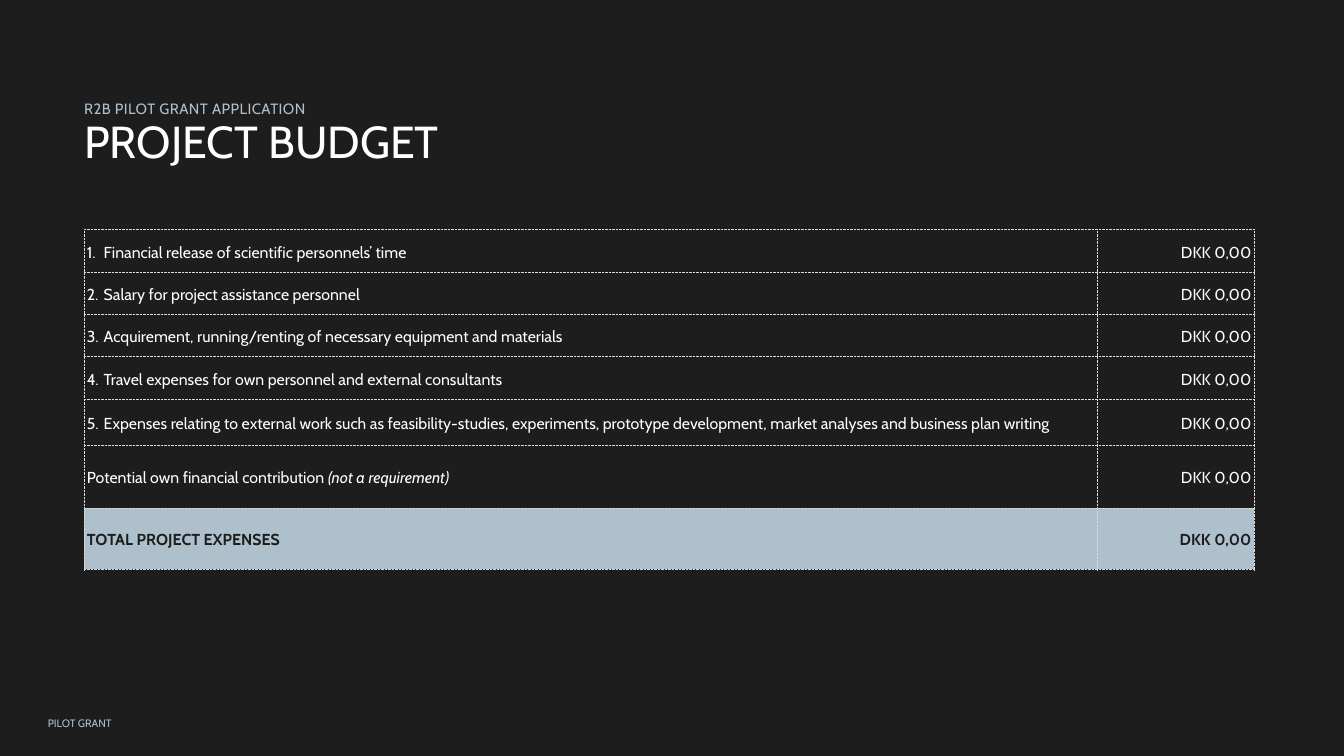
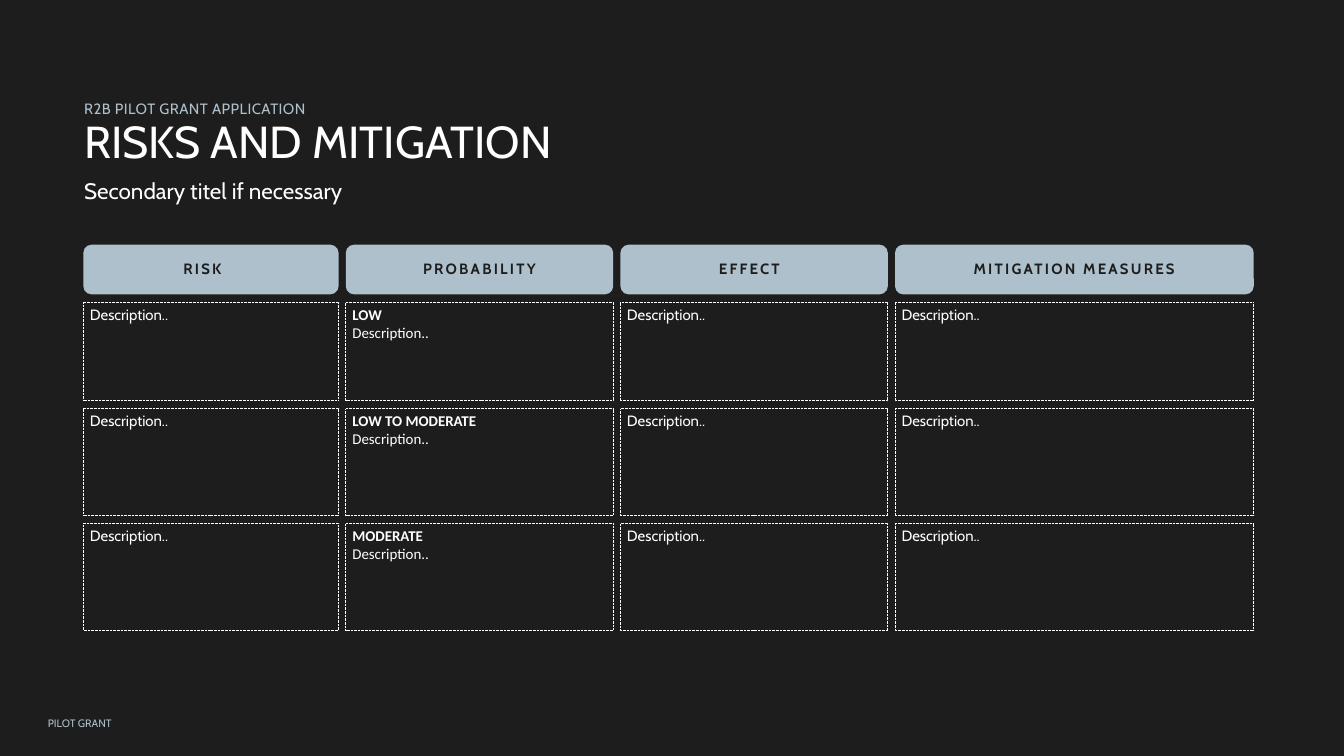
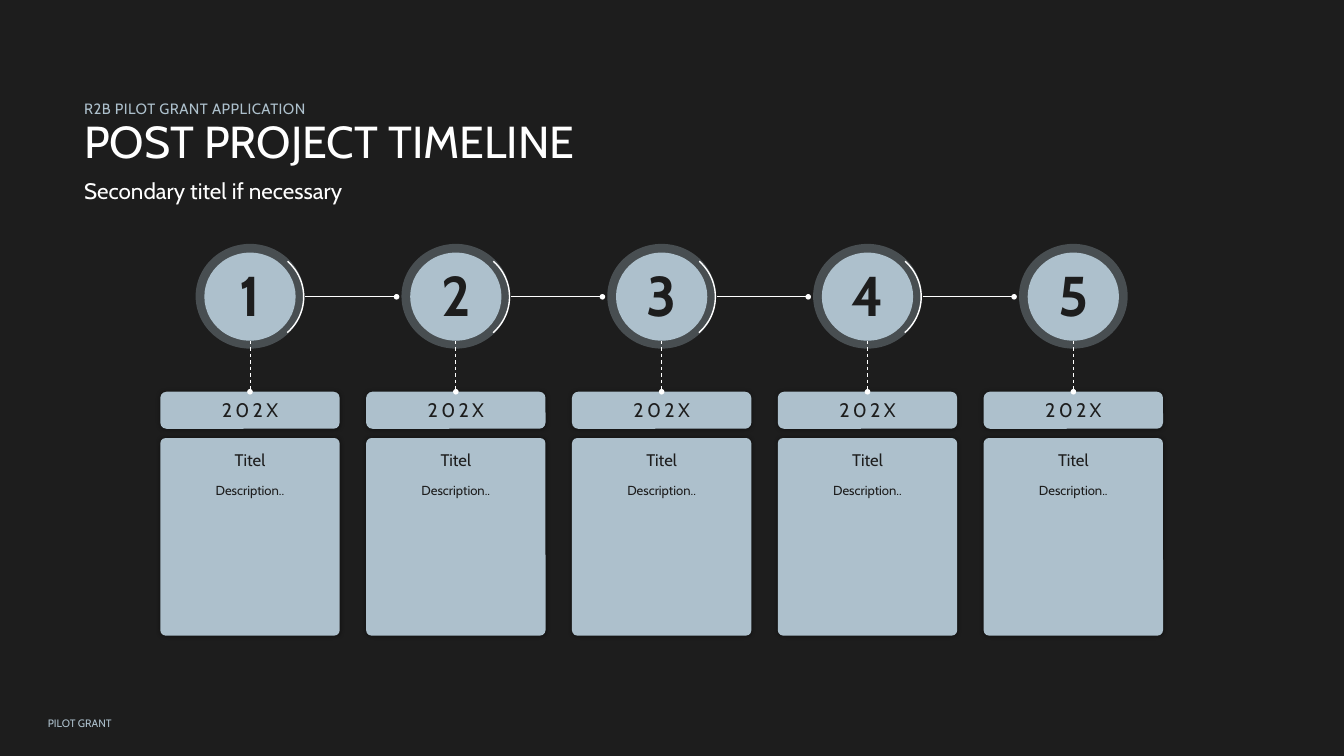
from lxml.etree import SubElement as Sub
from pptx import Presentation
from pptx.dml.color import RGBColor as Rgb
from pptx.enum.dml import MSO_LINE as Dash
from pptx.enum.shapes import MSO_CONNECTOR as Wire, MSO_SHAPE as Kind
from pptx.enum.text import MSO_ANCHOR as Anchor, PP_ALIGN as Align
from pptx.oxml.ns import qn
from pptx.util import Cm, Pt

DARK = Rgb(0x1D, 0x1D, 0x1D)
BLUE = Rgb(0xAD, 0xC0, 0xCC)
WHITE = Rgb(0xFF, 0xFF, 0xFF)
GRID = "D9D9D9"

GRANT = "R2B PILOT GRANT APPLICATION"
FOOT = "PILOT GRANT"
SECOND = "Secondary titel if necessary"
NOTE = "Description.."
PRICE = "DKK 0,00"

COSTS = [
    ("1.\tFinancial release of scientific personnels’ time", 1.6),
    ("2.\tSalary for project assistance personnel", 1.6),
    ("3.\tAcquirement, running/renting of necessary equipment and materials", 1.6),
    ("4.\tTravel expenses for own personnel and external consultants", 1.6),
    ("5.\tExpenses relating to external work such as feasibility-studies, experiments, "
     "prototype development, market analyses and business plan writing", 1.73),
    ([("Potential own financial contribution ", False), ("(not a requirement)", True)], 2.39),
    ("TOTAL PROJECT EXPENSES", 2.31),
]
COLS = [38.3, 5.92]

HEADS = [
    ("RISK", 9.65, -0.32),
    ("PROBABILITY", 10.11, 0),
    ("EFFECT", 10.11, -0.18),
    ("MITIGATION MEASURES", 13.56, 0),
]
RISKS = [("LOW", 3.73), ("LOW TO MODERATE", 4.04), ("MODERATE", 4.04)]

STEPS = [(str(n), "202X", "Titel", NOTE) for n in range(1, 6)]


def write(frame, *lines, size=16, font="Cabin", color=WHITE, bold=False, align=Align.LEFT,
          anchor=Anchor.TOP, track=0, lead=None, after=None, tab=None, lift=False):
    frame.word_wrap = True
    frame.vertical_anchor = anchor
    for i, line in enumerate(lines):
        para = frame.add_paragraph() if i else frame.paragraphs[0]
        para.alignment = align
        if lead:
            para.line_spacing = lead
        if after:
            para.space_after = Pt(after)
        if tab:
            tabs = Sub(para._p.get_or_add_pPr(), qn("a:tabLst"))
            Sub(tabs, qn("a:tab"), pos=str(Cm(tab)), algn="l")
        for text, slant in [(line, False)] if isinstance(line, str) else line:
            run = para.add_run()
            run.text = text
            face = run.font
            face.name, face.size, face.italic = font, Pt(size), slant
            face.bold = bold and not (lift and i)
            face.color.rgb = color
            if track:
                run._r.get_or_add_rPr().set("spc", str(round(track * 100)))


def label(page, text, x, y, w, h, pad=0, **form):
    frame = page.shapes.add_textbox(Cm(x), Cm(y), Cm(w), Cm(h)).text_frame
    frame.margin_left = frame.margin_right = Cm(pad)
    frame.margin_top = frame.margin_bottom = Cm(pad / 2)
    write(frame, text, **form)


def shape(page, kind, x, y, w, h, fill=None, alpha=None, line=None, dash=None, glow=False):
    part = page.shapes.add_shape(kind, Cm(x), Cm(y), Cm(w), Cm(h))
    part.shadow.inherit = False
    if fill:
        part.fill.solid()
        part.fill.fore_color.rgb = fill
    else:
        part.fill.background()
    if alpha:
        tint = part._element.spPr.find(".//" + qn("a:srgbClr"))
        Sub(tint, qn("a:alpha"), val=str(alpha * 1000))
    if line:
        part.line.color.rgb = WHITE
        part.line.width = Pt(line)
        part.line.dash_style = dash
    else:
        part.line.fill.background()
    if glow:
        list_ = part._element.spPr.find(qn("a:effectLst"))
        cast = Sub(list_, qn("a:outerShdw"), blurRad=str(Pt(5)), dist="0", dir="0")
        Sub(Sub(cast, qn("a:srgbClr"), val="000000"), qn("a:alpha"), val="40000")
    return part


def link(page, x1, y1, x2, y2, width, dash=None):
    wire = page.shapes.add_connector(Wire.STRAIGHT, Cm(x1), Cm(y1), Cm(x2), Cm(y2))
    wire.line.color.rgb = WHITE
    wire.line.width = Pt(width)
    wire.line.dash_style = dash
    Sub(wire.line._ln, qn("a:tailEnd"), type="oval")
    Sub(wire._element.spPr, qn("a:effectLst"))


def start(deck, title, second=None):
    page = deck.slides.add_slide(deck.slide_layouts[6])
    page.background.fill.solid()
    page.background.fill.fore_color.rgb = DARK
    label(page, title, 3.18, 4.39, 23.5, 1.96, size=48, lead=Pt(55))
    label(page, FOOT, 1.73, 24.92, 2.57, 2.34, size=11.5, color=BLUE,
          align=Align.CENTER, anchor=Anchor.MIDDLE, lead=Pt(84.7))
    label(page, GRANT, 3.18, 3.51, 14.63, 0.84, color=BLUE, track=0.5,
          align=Align.JUSTIFY, lead=Pt(26.2))
    if second:
        label(page, second, 3.18, 6.68, 21.82, 1.02, size=24, anchor=Anchor.MIDDLE)
    return page


def edge(cell):
    props = cell._tc.get_or_add_tcPr()
    for i, side in enumerate(("lnL", "lnR", "lnT", "lnB")):
        rule = Sub(props, qn("a:" + side), w=str(Pt(1)))
        Sub(Sub(rule, qn("a:solidFill")), qn("a:srgbClr"), val=GRID)
        Sub(rule, qn("a:prstDash"), val="dot")
        props.insert(i, rule)


def budget(deck):
    page = start(deck, "PROJECT BUDGET")
    high = sum(h for _, h in COSTS)
    grid = page.shapes.add_table(len(COSTS), len(COLS), Cm(3.18), Cm(8.69),
                                 Cm(sum(COLS)), Cm(high)).table
    grid.first_row = grid.horz_banding = False
    for col, wide in zip(grid.columns, COLS):
        col.width = Cm(wide)
    for row, (name, tall) in zip(grid.rows, COSTS):
        row.height = Cm(tall)
        total = name == COSTS[-1][0]
        for cell, text, align in zip(row.cells, (name, PRICE), (Align.LEFT, Align.RIGHT)):
            cell.margin_left = cell.margin_right = Cm(0.1)
            cell.margin_top = cell.margin_bottom = 0
            cell.vertical_anchor = Anchor.MIDDLE
            if total:
                cell.fill.solid()
                cell.fill.fore_color.rgb = BLUE
            else:
                cell.fill.background()
            edge(cell)
            write(cell.text_frame, text, size=17, color=DARK if total else WHITE, bold=total,
                  align=align, anchor=Anchor.MIDDLE, lead=1.15, after=10, tab=0.64)


def risks(deck):
    page = start(deck, "RISKS AND MITIGATION", SECOND)
    x, gap = 3.15, 0.27
    for head, wide, shift in HEADS:
        shape(page, Kind.ROUNDED_RECTANGLE, x, 9.25, wide, 1.88, fill=BLUE)
        label(page, head, x + shift, 9.83, wide, 0.69, color=DARK, bold=True,
              track=2.4, align=Align.CENTER)
        y = 11.42
        for level, tall in RISKS:
            box = shape(page, Kind.RECTANGLE, x, y, wide, tall, line=0.75, dash=Dash.ROUND_DOT)
            if head == "PROBABILITY":
                write(box.text_frame, level, NOTE, font="Calibri", bold=True, lift=True)
            else:
                write(box.text_frame, NOTE)
            y += tall + 0.3
        x += wide + gap


def timeline(deck):
    page = start(deck, "POST PROJECT TIMELINE", SECOND)
    for i, (mark, year, name, note) in enumerate(STEPS):
        mid = 9.45 + 7.78 * i

        def place(y, w, h):
            return mid - w / 2, y, w, h

        shape(page, Kind.OVAL, *place(9.22, 4.11, 3.96), fill=BLUE, alpha=30)
        shape(page, Kind.OVAL, *place(9.55, 3.45, 3.33), fill=BLUE)
        if i < len(STEPS) - 1:
            link(page, mid + 2.08, 11.22, mid + 5.54, 11.22, 1.5)
            arc = shape(page, Kind.ARC, mid - 1.73, 9.3, 3.68, 3.84, line=1.5)
            arc.rotation = 270
            arc.adjustments[0], arc.adjustments[1] = 26.57, 81.76
        shape(page, Kind.ROUNDED_RECTANGLE, *place(14.81, 6.78, 1.4), fill=BLUE, glow=True)
        card = shape(page, Kind.ROUNDED_RECTANGLE, *place(16.56, 6.78, 7.47),
                     fill=BLUE, glow=True)
        card.adjustments[0] = 0.03
        link(page, mid, 12.88, mid, 14.81, 1, Dash.DASH)
        ink = dict(color=DARK, align=Align.CENTER)
        label(page, mark, *place(9.83, 1.47, 2.57), size=60, bold=True, track=3.6,
              anchor=Anchor.MIDDLE, **ink)
        label(page, year, *place(15.04, 5.97, 0.89), size=21, track=3.6, **ink)
        label(page, name, *place(17.04, 6.71, 0.86), pad=0.25, size=18, lead=Pt(17), **ink)
        label(page, note, *place(18.1, 6.71, 0.81), pad=0.25, size=14, lead=Pt(17), **ink)


def main():
    deck = Presentation()
    deck.slide_width, deck.slide_height = Cm(50.8), Cm(28.58)
    budget(deck)
    risks(deck)
    timeline(deck)
    deck.save("out.pptx")


if __name__ == "__main__":
    main()
